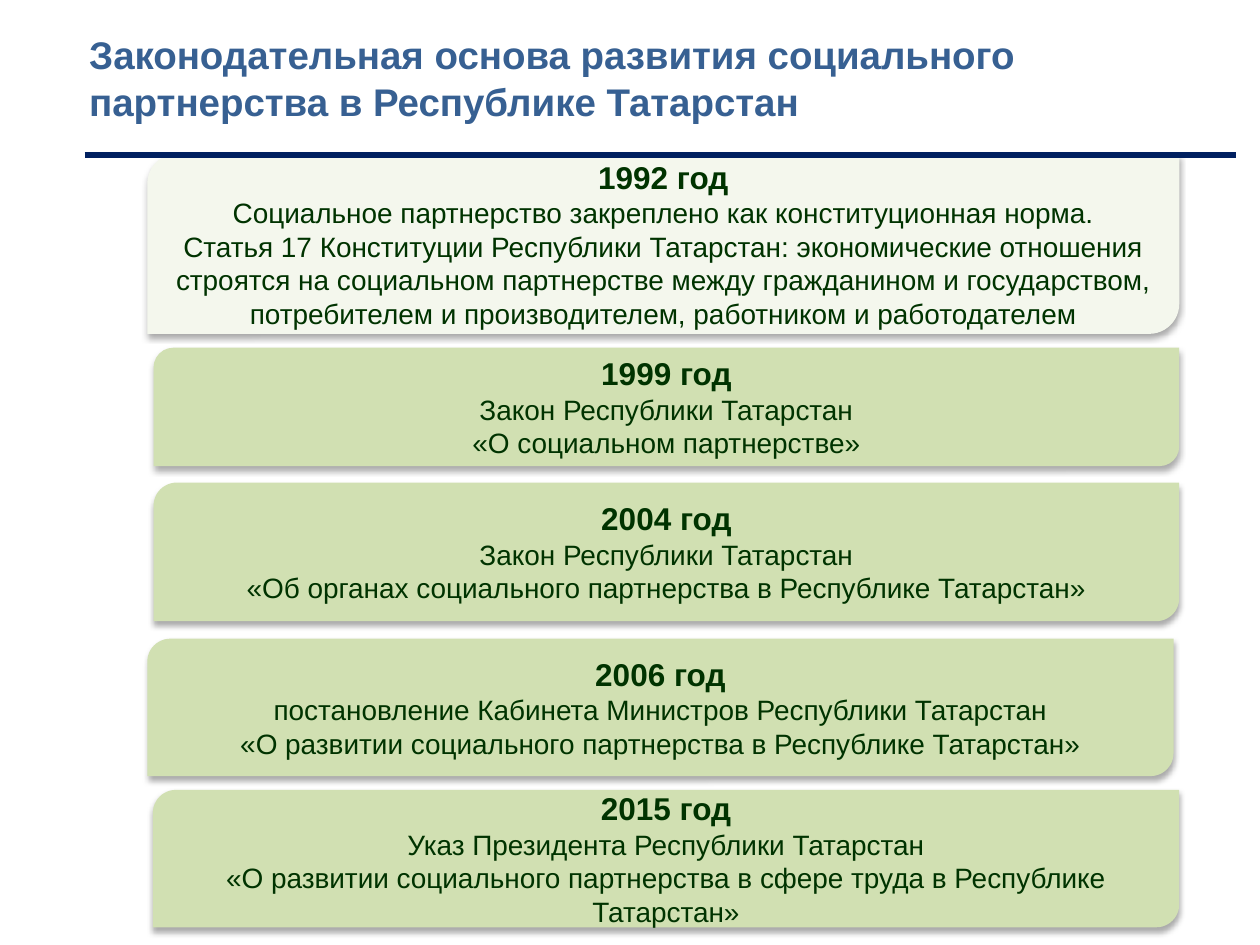
from dataclasses import dataclass

from lxml import etree
from pptx import Presentation
from pptx.dml.color import RGBColor
from pptx.enum import shapes, text
from pptx.oxml import ns
from pptx.util import Pt


@dataclass(frozen=True)
class Theme:
    font: str = "Arial"
    title: RGBColor = RGBColor(0x37, 0x60, 0x92)
    rule: RGBColor = RGBColor(0x00, 0x20, 0x60)
    ink: RGBColor = RGBColor(0x00, 0x33, 0x00)
    pale: RGBColor = RGBColor(0xF4, 0xF7, 0xED)
    green: RGBColor = RGBColor(0xD1, 0xE0, 0xB2)
    title_size: int = 22
    year_size: int = 18
    body_size: int = 16


THEME = Theme()

# Each card: (left, top, width, height), fill, year, lines
CARDS = [
    ((84.2, 87.8, 589.7, 103), THEME.pale, "1992 год", [
        "Социальное партнерство закреплено как конституционная норма.",
        "Статья 17 Конституции Республики Татарстан: экономические отношения "
        "строятся на социальном партнерстве между гражданином и государством, "
        "потребителем и производителем, работником и работодателем"]),
    ((87.8, 198.7, 586.1, 67.7), THEME.green, "1999 год", [
        "Закон Республики Татарстан",
        "«О социальном партнерстве»"]),
    ((87.8, 275.8, 586.1, 79.2), THEME.green, "2004 год", [
        "Закон Республики Татарстан",
        "«Об органах социального партнерства в Республике Татарстан»"]),
    ((84.2, 365, 586.4, 78.5), THEME.green, "2006 год", [
        "постановление Кабинета Министров Республики Татарстан",
        "«О развитии социального партнерства в Республике Татарстан»"]),
    ((87.4, 451.4, 586.5, 78.5), THEME.green, "2015 год", [
        "Указ Президента Республики Татарстан",
        "«О развитии социального партнерства в сфере труда в Республике Татарстан»"]),
]


def style(para, size, color, bold):
    for span in para.runs:
        span.font.name = THEME.font
        span.font.size = Pt(size)
        span.font.bold = bold
        span.font.color.rgb = color


def add_soft_shadow(shape):
    shape.shadow.inherit = False
    effects = shape.element.spPr.find(ns.qn("a:effectLst"))
    shadow = etree.SubElement(
        effects, ns.qn("a:outerShdw"), blurRad=str(Pt(3.5)), dist=str(Pt(2.2)),
        dir="5400000", algn="ctr", rotWithShape="0")
    color = etree.SubElement(shadow, ns.qn("a:srgbClr"), val="000000")
    etree.SubElement(color, ns.qn("a:alpha"), val="32000")


def add_card(page, box, fill, year, lines):
    card = page.shapes.add_shape(
        shapes.MSO_SHAPE.ROUND_2_DIAG_RECTANGLE, *map(Pt, box))
    card.fill.solid()
    card.fill.fore_color.rgb = fill
    card.line.fill.background()
    add_soft_shadow(card)
    frame = card.text_frame
    frame.word_wrap = True
    frame.vertical_anchor = text.MSO_ANCHOR.MIDDLE
    frame.text = "\n".join([year, *lines])
    for index, para in enumerate(frame.paragraphs):
        para.alignment = text.PP_ALIGN.CENTER
        is_year = index == 0
        size = THEME.year_size if is_year else THEME.body_size
        style(para, size, THEME.ink, is_year)


def add_header(page, box, title):
    """Title with a rule under it that starts and ends 4.5 pt inside the box."""
    left, top, width, height = box
    label = page.shapes.add_textbox(*map(Pt, box))
    label.text_frame.word_wrap = True
    label.text_frame.text = title
    style(label.text_frame.paragraphs[0], THEME.title_size, THEME.title, True)

    rule_y = Pt(top + height - 14.4)
    rule = page.shapes.add_connector(
        shapes.MSO_CONNECTOR.STRAIGHT,
        Pt(left + 4.5), rule_y, Pt(left + width + 4.5), rule_y)
    rule.line.color.rgb = THEME.rule
    rule.line.width = Pt(3)
    etree.SubElement(rule.element.spPr, ns.qn("a:effectLst"))


def main():
    deck = Presentation()
    deck.slide_width, deck.slide_height = Pt(720), Pt(540)
    page = deck.slides.add_slide(deck.slide_layouts[6])
    for card in CARDS:
        add_card(page, *card)
    add_header(page, (43.9, 14.4, 658.1, 88.6),
               "Законодательная основа развития социального партнерства "
               "в Республике Татарстан")
    deck.save("out.pptx")


if __name__ == "__main__":
    main()
